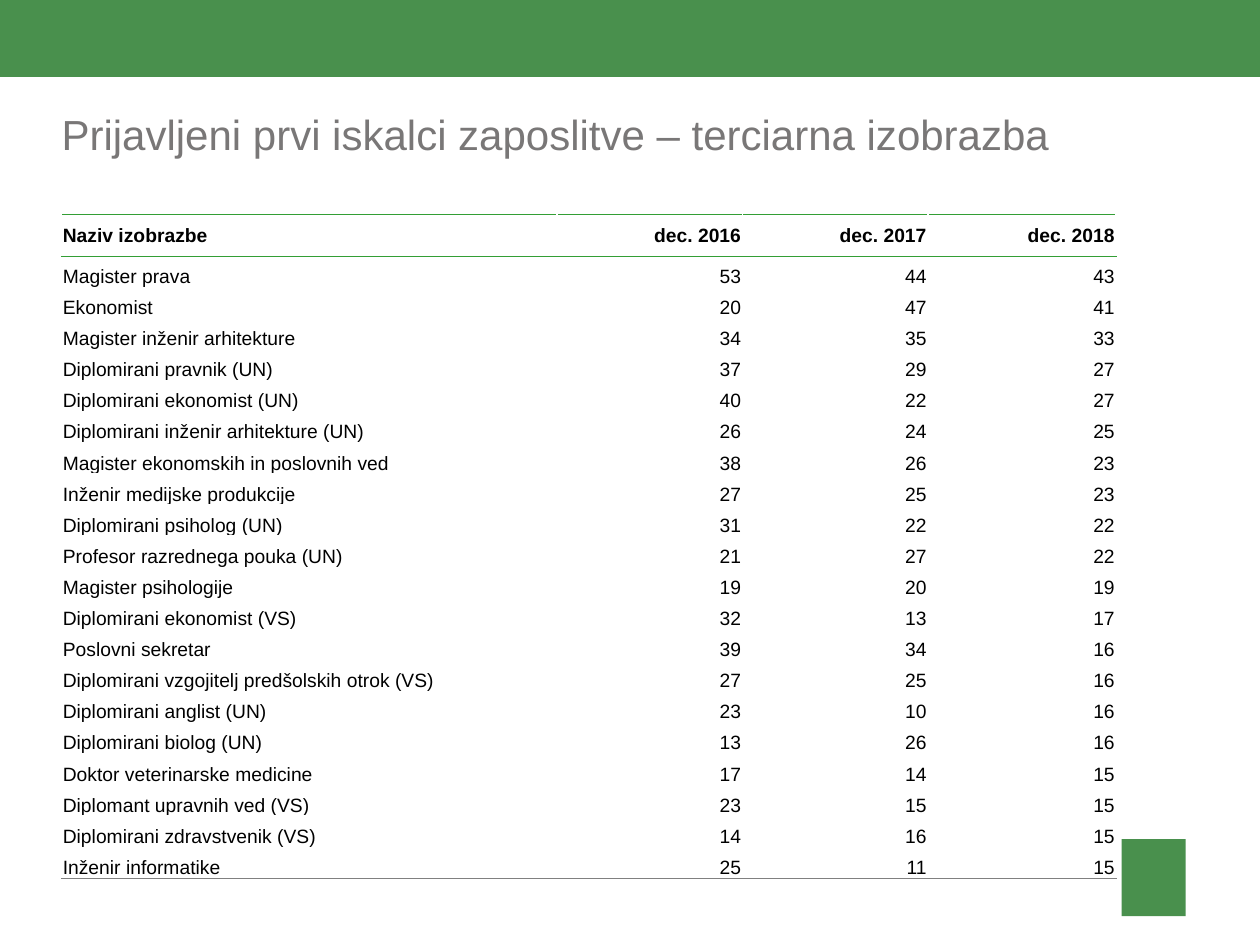
from pptx import Presentation
from pptx.dml.color import RGBColor
from pptx.enum.shapes import MSO_SHAPE
from pptx.enum.text import MSO_ANCHOR, PP_ALIGN
from pptx.oxml import parse_xml
from pptx.oxml.ns import nsdecls
from pptx.util import Pt

TITLE = "Prijavljeni prvi iskalci zaposlitve – terciarna izobrazba"
HEAD = ("Naziv izobrazbe", "dec. 2016", "dec. 2017", "dec. 2018")
ROWS = [
    ("Magister prava", 53, 44, 43),
    ("Ekonomist", 20, 47, 41),
    ("Magister inženir arhitekture", 34, 35, 33),
    ("Diplomirani pravnik (UN)", 37, 29, 27),
    ("Diplomirani ekonomist (UN)", 40, 22, 27),
    ("Diplomirani inženir arhitekture (UN)", 26, 24, 25),
    ("Magister ekonomskih in poslovnih ved", 38, 26, 23),
    ("Inženir medijske produkcije", 27, 25, 23),
    ("Diplomirani psiholog (UN)", 31, 22, 22),
    ("Profesor razrednega pouka (UN)", 21, 27, 22),
    ("Magister psihologije", 19, 20, 19),
    ("Diplomirani ekonomist (VS)", 32, 13, 17),
    ("Poslovni sekretar", 39, 34, 16),
    ("Diplomirani vzgojitelj predšolskih otrok (VS)", 27, 25, 16),
    ("Diplomirani anglist (UN)", 23, 10, 16),
    ("Diplomirani biolog (UN)", 13, 26, 16),
    ("Doktor veterinarske medicine", 17, 14, 15),
    ("Diplomant upravnih ved (VS)", 23, 15, 15),
    ("Diplomirani zdravstvenik (VS)", 14, 16, 15),
    ("Inženir informatike", 25, 11, 15),
]
WIDTHS = (283, 106, 106, 107.5)
HEAD_H, ROW_H = 24.2, 17.78
LEFT = 35.2
GREEN, RULE, GRAY = "49904D", "339E35", "808080"


def color(code):
    return RGBColor.from_string(code)


def style(para, size, code, bold=False):
    font = para.font
    font.name, font.size, font.bold = "Arial", Pt(size), bold
    font.color.rgb = color(code)


def block(slide, x, y, w, h):
    """Add a plain green rectangle."""
    shape = slide.shapes.add_shape(MSO_SHAPE.RECTANGLE, Pt(x), Pt(y), Pt(w), Pt(h))
    shape.shadow.inherit = False
    shape.fill.solid()
    shape.fill.fore_color.rgb = color(GREEN)
    shape.line.fill.background()


def border(cell, side, code):
    """Rule one side of a cell: T for top, B for bottom."""
    line = parse_xml(
        f'<a:ln{side} {nsdecls("a")} w="{Pt(0.5)}"><a:solidFill>'
        f'<a:srgbClr val="{code}"/></a:solidFill></a:ln{side}>')
    props = cell._tc.get_or_add_tcPr()
    props.insert(len(props) - 1, line)  # rules come before the fill


def add_title(slide):
    box = slide.shapes.add_textbox(Pt(LEFT), Pt(59), Pt(667), Pt(51))
    frame = box.text_frame
    frame.word_wrap = True
    frame.margin_left = frame.margin_right = frame.margin_bottom = 0
    frame.margin_top = Pt(3)
    para = frame.paragraphs[0]
    para.text = TITLE
    style(para, 24, "797777")


def add_grid(slide):
    data = [HEAD] + ROWS
    last = len(ROWS)
    table = slide.shapes.add_table(
        len(data), len(HEAD), Pt(LEFT), Pt(122.3),
        Pt(sum(WIDTHS)), Pt(HEAD_H + last * ROW_H)).table
    table.first_row = table.horz_banding = False
    for col, width in zip(table.columns, WIDTHS):
        col.width = Pt(width)
    for r, values in enumerate(data):
        table.rows[r].height = Pt(ROW_H if r else HEAD_H)
        for c, value in enumerate(values):
            cell = table.cell(r, c)
            cell.fill.background()
            cell.margin_left = cell.margin_right = cell.margin_top = Pt(0.7)
            cell.margin_bottom = 0
            cell.vertical_anchor = MSO_ANCHOR.BOTTOM if r else MSO_ANCHOR.MIDDLE
            para = cell.text_frame.paragraphs[0]
            para.text = str(value)
            para.alignment = PP_ALIGN.RIGHT if c else PP_ALIGN.LEFT
            style(para, 11, "000000", bold=r == 0)
            if r <= 1:
                border(cell, "T", RULE)
            if r == 0:
                border(cell, "B", RULE)
            if r == last:
                border(cell, "B", GRAY)


def main():
    deck = Presentation()
    deck.slide_width, deck.slide_height = Pt(720), Pt(540)
    slide = deck.slides.add_slide(deck.slide_layouts[6])
    block(slide, 0, -0.7, 720, 44.7)
    block(slide, 641, 479.5, 36.5, 44)
    add_title(slide)
    add_grid(slide)
    deck.save("out.pptx")


if __name__ == "__main__":
    main()
